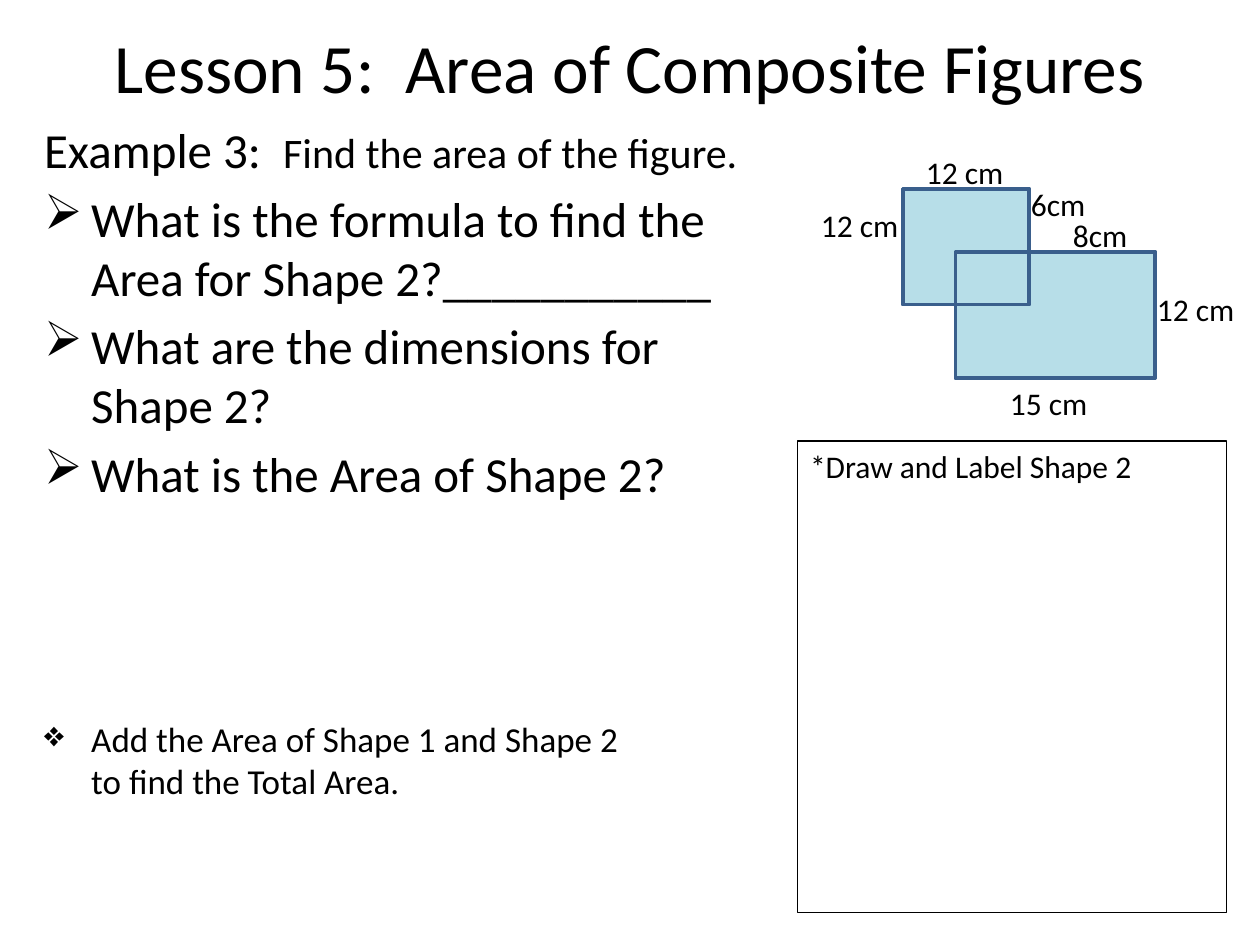
from dataclasses import dataclass

from lxml import etree
from pptx import Presentation
from pptx.dml.color import RGBColor
from pptx.enum.shapes import MSO_SHAPE
from pptx.enum.text import MSO_ANCHOR, PP_ALIGN
from pptx.oxml.ns import qn
from pptx.util import Cm, Pt

RECTANGLE = MSO_SHAPE.RECTANGLE
TOP, MIDDLE = MSO_ANCHOR.TOP, MSO_ANCHOR.MIDDLE
LEFT, CENTER = PP_ALIGN.LEFT, PP_ALIGN.CENTER


@dataclass(frozen=True)
class Theme:
    font: str = "Calibri"
    ink: str = "000000"
    figure_fill: str = "B7DEE8"
    figure_line: str = "3A5F8C"
    title: float = 39.6
    question: float = 28
    task: float = 24
    closing: float = 20
    label: float = 18
    figure_stroke: float = 2
    frame_stroke: float = 0.75


THEME = Theme()

TITLE = "Lesson 5:  Area of Composite Figures"
EXAMPLE = [("Example 3:  ", THEME.question), ("Find the area of the figure.", THEME.task)]
QUESTIONS = [
    "What is the formula to find the Area for Shape 2?___________",
    "What are the dimensions for Shape 2?",
    "What is the Area of Shape 2?",
]
CLOSING_LINES = ["Add the Area of Shape 1 and Shape 2", "to find the Total Area."]
DRAWING_PROMPT = "*Draw and Label Shape 2"

TITLE_AREA = (1.27, 0.43, 22.86, 1.78)
BODY_AREA = (0.64, 2.29, 14.81, 16.56)
DRAWING_AREA = (16.08, 8.89, 8.64, 9.5)

GRID_STEP = 2.54 / 12
LABEL_HEIGHT = 4.8
SHAPE_1 = (86, 18, 12, 11)
SHAPE_2 = (91, 24, 19, 12)
SIDE_LABELS = [
    ("12 cm", 87, 14, 11),
    ("12 cm", 77, 19, 11),
    ("12 cm", 109, 27, 11),
    ("6cm", 97, 17, 9),
    ("8cm", 101, 20, 9),
    ("15 cm", 95, 36, 11),
]

HANGING_INDENT = 0.95
ANSWER_GAP = 123


def lengths(area):
    return [Cm(value) for value in area]


def on_grid(area):
    return [Cm(value * GRID_STEP) for value in area]


def add_span(para, text, size):
    span = para.add_run()
    span.text = text
    span.font.name = THEME.font
    span.font.size = Pt(size)
    span.font.color.rgb = RGBColor.from_string(THEME.ink)


def prepare_frame(shape, anchor=TOP):
    frame = shape.text_frame
    frame.word_wrap = True
    frame.vertical_anchor = anchor
    return frame


def write_line(shape, text, size, align=LEFT, anchor=TOP):
    para = prepare_frame(shape, anchor).paragraphs[0]
    para.alignment = align
    add_span(para, text, size)


def add_bullet(frame, symbol, size, gap):
    para = frame.add_paragraph()
    para.space_before = Pt(gap)
    properties = para._p.get_or_add_pPr()
    properties.set("marL", str(Cm(HANGING_INDENT)))
    properties.set("indent", str(-Cm(HANGING_INDENT)))
    etree.SubElement(properties, qn("a:buChar")).set("char", symbol)
    return para


def add_rectangle(shapes, area, line, stroke, fill=None):
    box = shapes.add_shape(RECTANGLE, *area)
    box.shadow.inherit = False
    box.line.color.rgb = RGBColor.from_string(line)
    box.line.width = Pt(stroke)
    if fill:
        box.fill.solid()
        box.fill.fore_color.rgb = RGBColor.from_string(fill)
    else:
        box.fill.background()
    return box


def add_body(page):
    frame = prepare_frame(page.shapes.add_textbox(*lengths(BODY_AREA)))
    for text, size in EXAMPLE:
        add_span(frame.paragraphs[0], text, size)
    for question in QUESTIONS:
        para = add_bullet(frame, "➢", THEME.question, THEME.question * 0.2)
        add_span(para, question, THEME.question)
    para = add_bullet(frame, "❖", THEME.closing, ANSWER_GAP)
    for number, text in enumerate(CLOSING_LINES):
        if number:
            para.add_line_break()
        add_span(para, text, THEME.closing)


def add_figure(page):
    figure = page.shapes.add_group_shape()
    outlines = [
        (SHAPE_2, THEME.figure_fill),
        (SHAPE_1, THEME.figure_fill),
        (SHAPE_1, None),
        (SHAPE_2, None),
    ]
    for area, fill in outlines:
        add_rectangle(figure.shapes, on_grid(area), THEME.figure_line, THEME.figure_stroke, fill)
    for text, left, top, width in SIDE_LABELS:
        label = figure.shapes.add_textbox(*on_grid((left, top, width, LABEL_HEIGHT)))
        write_line(label, text, THEME.label)


def main():
    deck = Presentation()
    deck.slide_width, deck.slide_height = Cm(25.4), Cm(19.05)
    page = deck.slides.add_slide(deck.slide_layouts[6])
    title = page.shapes.add_textbox(*lengths(TITLE_AREA))
    write_line(title, TITLE, THEME.title, CENTER, MIDDLE)
    add_body(page)
    drawing = add_rectangle(page.shapes, lengths(DRAWING_AREA), THEME.ink, THEME.frame_stroke)
    write_line(drawing, DRAWING_PROMPT, THEME.label)
    add_figure(page)
    deck.save("out.pptx")


if __name__ == "__main__":
    main()
